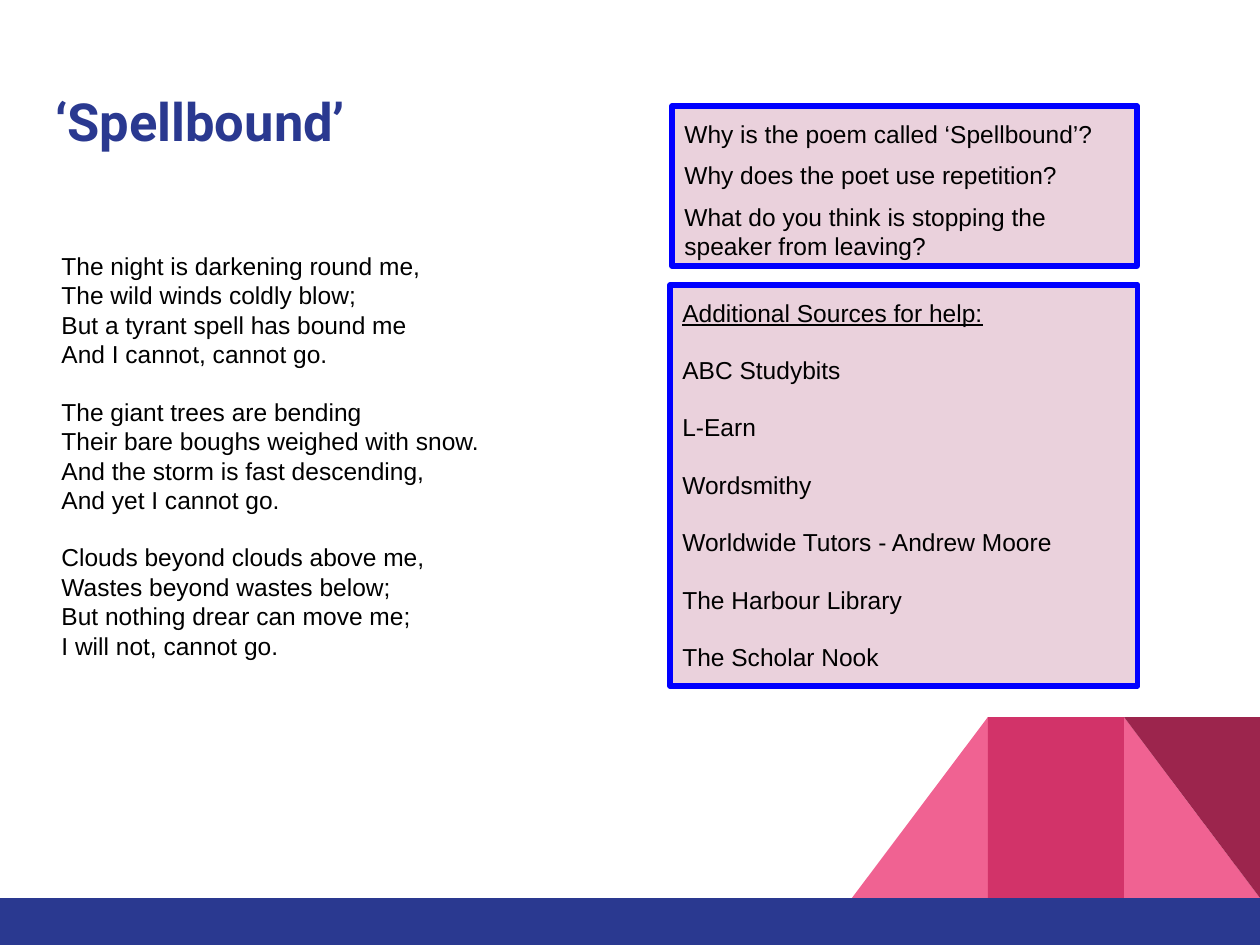
from pptx import Presentation
from pptx import util as u
from pptx.dml.color import RGBColor
from pptx.enum import shapes, text
from pptx.oxml import ns
from lxml import etree

PX = u.Inches(1) / 126
NAVY = RGBColor(0x2A, 0x39, 0x90)
PINK = RGBColor(0xF0, 0x62, 0x92)
CRIMSON = RGBColor(0xD2, 0x33, 0x69)
MAROON = RGBColor(0x9C, 0x25, 0x4D)
BLUSH = RGBColor(0xEA, 0xD1, 0xDC)
BLUE = RGBColor(0x00, 0x00, 0xFF)
BLACK = RGBColor(0x00, 0x00, 0x00)

STANZAS = [
    ["The night is darkening round me,",
     "The wild winds coldly blow;",
     "But a tyrant spell has bound me",
     "And I cannot, cannot go."],
    ["The giant trees are bending",
     "Their bare boughs weighed with snow.",
     "And the storm is fast descending,",
     "And yet I cannot go."],
    ["Clouds beyond clouds above me,",
     "Wastes beyond wastes below;",
     "But nothing drear can move me;",
     "I will not, cannot go."],
]
QUESTIONS = [
    "Why is the poem called ‘Spellbound’?",
    "Why does the poet use repetition?",
    "What do you think is stopping the speaker from leaving?",
]
SOURCES = [
    "Additional Sources for help:",
    "ABC Studybits",
    "L-Earn",
    "Wordsmithy",
    "Worldwide Tutors - Andrew Moore",
    "The Harbour Library",
    "The Scholar Nook",
]


def px(*lengths):
    return [round(length * PX) for length in lengths]


def add_block(slide, kind, box, fill):
    shape = slide.shapes.add_shape(kind, *px(*box))
    shape.shadow.inherit = False
    shape.fill.solid()
    shape.fill.fore_color.rgb = fill
    shape.line.fill.background()
    return shape


def write_groups(shape, groups, gap, size=14, font="Arial", color=BLACK, bold=None,
                 anchor=text.MSO_ANCHOR.TOP):
    """Write groups of lines, with a gap in points before each later group."""
    frame = shape.text_frame
    frame.word_wrap = True
    frame.vertical_anchor = anchor
    frame.margin_left = frame.margin_right = u.Inches(0.1)
    frame.margin_top = frame.margin_bottom = u.Inches(0.1)
    frame.text = "\n".join(line for group in groups for line in group)
    for paragraph in frame.paragraphs:
        paragraph.alignment = text.PP_ALIGN.LEFT
        for run in paragraph.runs:
            run.font.size = u.Pt(size)
            run.font.name = font
            run.font.bold = bold
            run.font.color.rgb = color
    start = 0
    for group in groups[:-1]:
        start += len(group)
        frame.paragraphs[start].space_before = u.Pt(gap)
    return frame


def add_decoration(slide, left, top, width, height):
    """Folded ribbon at the right, standing on a full-width bar."""
    bar_height, fold_width, fold_height = 47, 136, 181
    bar_top = top + height - bar_height
    fold_top = bar_top - fold_height
    folds = [left + width - fold_width * count for count in (3, 2, 1)]
    triangle = shapes.MSO_SHAPE.RIGHT_TRIANGLE
    rectangle = shapes.MSO_SHAPE.RECTANGLE
    size = (fold_width, fold_height)

    add_block(slide, triangle, (folds[2], fold_top, *size), PINK)
    slope = add_block(slide, triangle, (folds[0], fold_top, *size), PINK)
    slope._element.spPr.xfrm.set("flipH", "1")
    add_block(slide, rectangle, (folds[1], fold_top, *size), CRIMSON)
    corner = add_block(slide, triangle, (folds[2], fold_top, *size), MAROON)
    corner.rotation = 180
    add_block(slide, rectangle, (left, bar_top, width, bar_height), NAVY)


def add_title(slide, left, top, width, height):
    box = slide.shapes.add_textbox(*px(left, top, width, height))
    write_groups(box, [["‘Spellbound’"]], 0, 30, "Roboto", NAVY, True)


def add_poem(slide, left, top, width, height):
    box = slide.shapes.add_textbox(*px(left, top, width, height))
    write_groups(box, STANZAS, 16, anchor=text.MSO_ANCHOR.MIDDLE)


def add_panel(slide, lines, gap, left, top, width, height):
    """Outlined panel with one spaced paragraph for each line."""
    panel = add_block(slide, shapes.MSO_SHAPE.RECTANGLE, (left, top, width, height), BLUSH)
    panel.line.color.rgb = BLUE
    panel.line.width = u.Pt(3)
    outline = panel._element.spPr.find(ns.qn("a:ln"))
    etree.SubElement(outline, ns.qn("a:round"))
    return write_groups(panel, [[line] for line in lines], gap)


def main():
    presentation = Presentation()
    presentation.slide_width, presentation.slide_height = px(1260, 945)
    slide = presentation.slides.add_slide(presentation.slide_layouts[6])

    add_decoration(slide, 0, 0, 1260, 945)
    add_title(slide, 43, 76, 1174, 112)
    add_poem(slide, 49, 199, 551, 513)
    sources = add_panel(slide, SOURCES, 16, 670, 285, 468, 401)
    sources.paragraphs[0].runs[0].font.underline = True
    add_panel(slide, QUESTIONS, 7, 672, 106, 465, 160)

    presentation.save("out.pptx")


if __name__ == "__main__":
    main()
